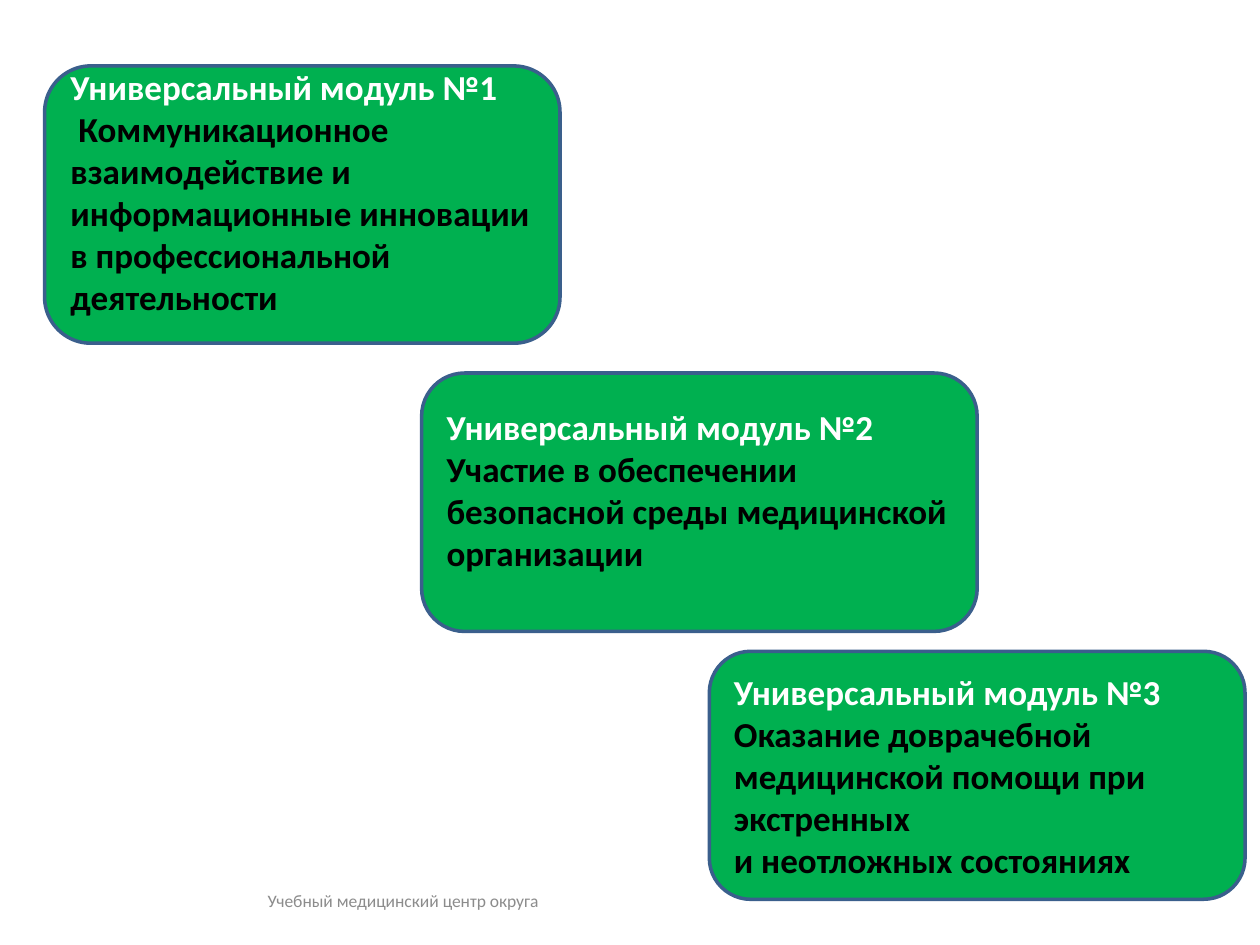
from dataclasses import dataclass

from pptx import Presentation
from pptx.dml.color import RGBColor
from pptx.enum.shapes import MSO_SHAPE
from pptx.enum.text import MSO_ANCHOR, PP_ALIGN
from pptx.util import Cm, Pt


@dataclass(frozen=True)
class Theme:
    font: str = "Calibri"
    card: str = "00B050"
    outline: str = "3A5F8C"
    heading: str = "FFFFFF"
    body: str = "000000"
    footer: str = "8C8C8C"
    module_size: int = 20
    footer_size: int = 10
    outline_width: int = 2


def write(paragraph, text, *, font, size, color, bold=False, align=PP_ALIGN.LEFT):
    paragraph.alignment = align
    run = paragraph.add_run()
    run.text = text
    run.font.name = font
    run.font.size = Pt(size)
    run.font.bold = bold
    run.font.color.rgb = RGBColor.from_string(color)


class ModuleSlide:
    def __init__(self, slide, theme):
        self.slide = slide
        self.theme = theme

    def footer(self, box, text):
        theme = self.theme
        frame = self.slide.shapes.add_textbox(*map(Cm, box)).text_frame
        frame.word_wrap = True
        frame.vertical_anchor = MSO_ANCHOR.MIDDLE
        write(frame.paragraphs[0], text, font=theme.font, size=theme.footer_size,
              color=theme.footer, align=PP_ALIGN.RIGHT)

    def module(self, box, number, topics, bottom_inset):
        theme = self.theme
        card = self.slide.shapes.add_shape(MSO_SHAPE.ROUNDED_RECTANGLE, *map(Cm, box))
        card.shadow.inherit = False
        card.fill.solid()
        card.fill.fore_color.rgb = RGBColor.from_string(theme.card)
        card.line.color.rgb = RGBColor.from_string(theme.outline)
        card.line.width = Pt(theme.outline_width)

        frame = card.text_frame
        frame.word_wrap = True
        frame.vertical_anchor = MSO_ANCHOR.MIDDLE
        frame.margin_bottom = Cm(bottom_inset)
        style = dict(font=theme.font, size=theme.module_size, bold=True)
        write(frame.paragraphs[0], f"Универсальный модуль №{number}",
              color=theme.heading, **style)
        for topic in topics:
            write(frame.add_paragraph(), topic, color=theme.body, **style)


# Box (left, top, width, height), topic lines and bottom inset, all in cm
MODULES = [
    ((0.9, 1.33, 10.39, 5.59),
     [" Коммуникационное взаимодействие и информационные инновации "
      "в профессиональной деятельности"], 0.64),
    ((8.5, 7.52, 11.2, 5.21),
     ["Участие в обеспечении безопасной среды медицинской организации"], 0.64),
    ((14.3, 13.13, 10.8, 5),
     ["Оказание доврачебной медицинской помощи при экстренных",
      "и неотложных состояниях"], 0.13),
]


def main():
    presentation = Presentation()
    presentation.slide_width = Cm(25.4)
    presentation.slide_height = Cm(19.05)
    blank = presentation.slide_layouts[6]
    page = ModuleSlide(presentation.slides.add_slide(blank), Theme())

    # Footer
    page.footer((1.7, 17.65, 9.4, 1.02), "Учебный медицинский центр округа")

    # Staircase of modules
    for number, (box, topics, bottom_inset) in enumerate(MODULES, start=1):
        page.module(box, number, topics, bottom_inset)

    presentation.save("out.pptx")


if __name__ == "__main__":
    main()
